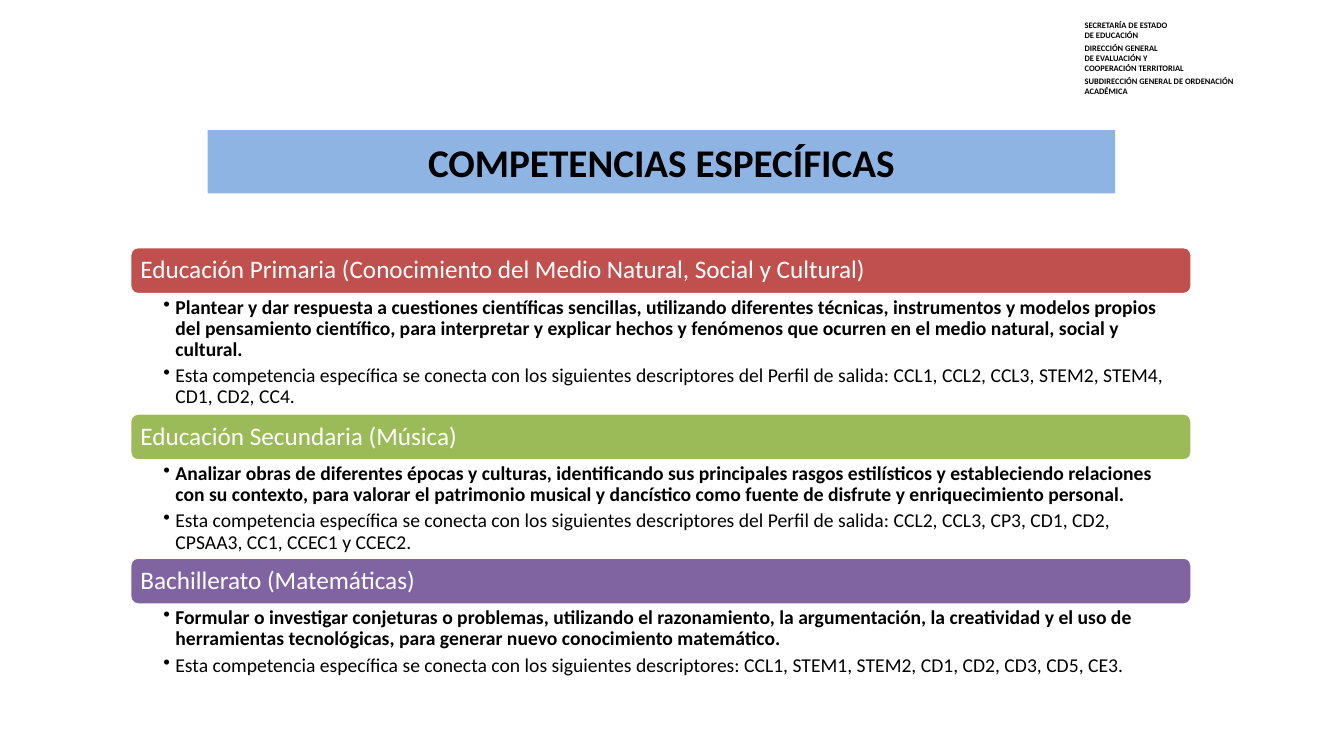
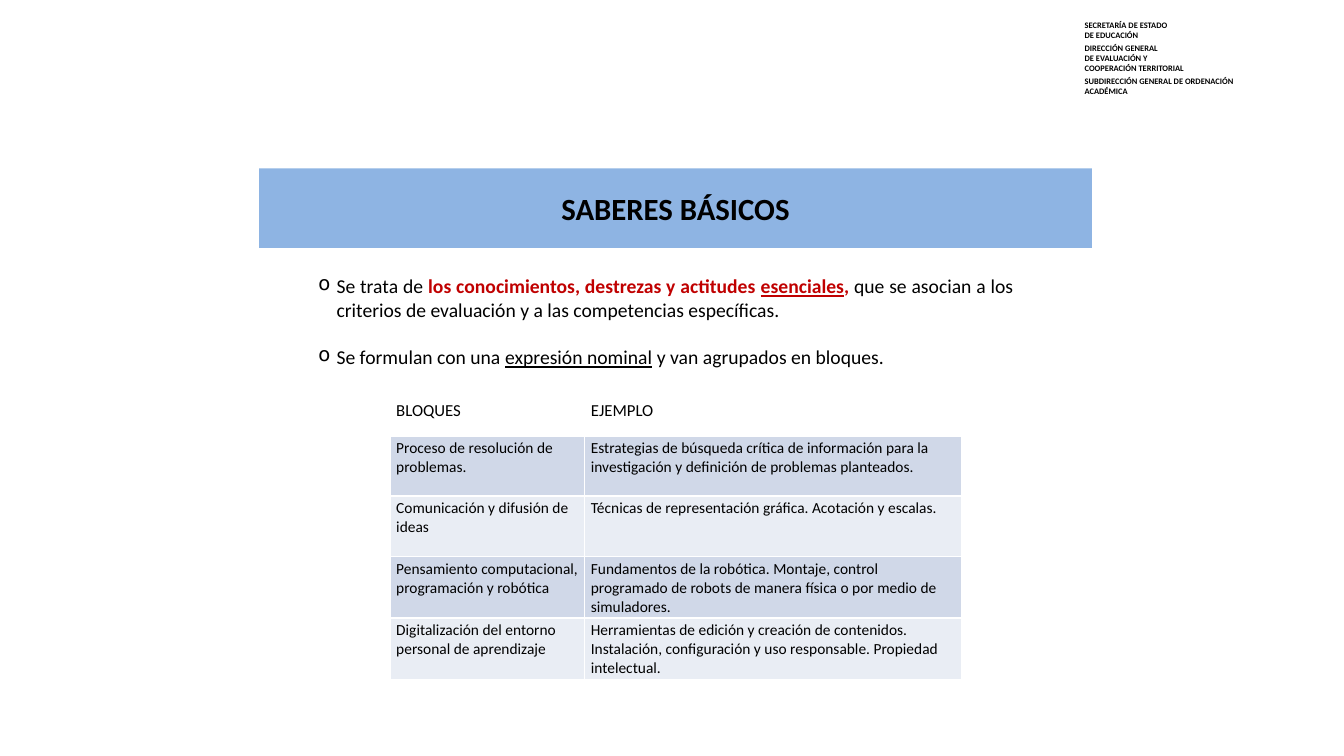
from dataclasses import dataclass

from lxml import etree
from pptx import Presentation
from pptx.dml.color import RGBColor
from pptx.enum.shapes import MSO_SHAPE
from pptx.enum.text import MSO_ANCHOR, PP_ALIGN
from pptx.oxml.ns import qn
from pptx.util import Emu, Pt

PX = 9144  # 100 px to the inch
FONT = "Calibri"
BLANK_LAYOUT = 6

BLACK = RGBColor(0x00, 0x00, 0x00)
WHITE = RGBColor(0xFF, 0xFF, 0xFF)
TITLE_BLUE = RGBColor(0x8E, 0xB4, 0xE3)
RED = RGBColor(0xC0, 0x50, 0x4D)
GREEN = RGBColor(0x9B, 0xBB, 0x59)
PURPLE = RGBColor(0x80, 0x64, 0xA2)
DARK_RED = RGBColor(0xC0, 0x00, 0x00)
ROW_DARK = RGBColor(0xD0, 0xD8, 0xE8)
ROW_LIGHT = RGBColor(0xE9, 0xED, 0xF4)

RECTANGLE = MSO_SHAPE.RECTANGLE
ROUNDED = MSO_SHAPE.ROUNDED_RECTANGLE
TOP, MIDDLE = MSO_ANCHOR.TOP, MSO_ANCHOR.MIDDLE
LEFT, CENTER, JUSTIFY = PP_ALIGN.LEFT, PP_ALIGN.CENTER, PP_ALIGN.JUSTIFY


@dataclass(frozen=True)
class Area:
    left: int
    top: int
    width: int
    height: int

    def emu(self) -> list[Emu]:
        return [px(n) for n in (self.left, self.top, self.width, self.height)]


@dataclass(frozen=True)
class Span:
    text: str
    bold: bool = False
    underline: bool = False
    color: RGBColor = BLACK


@dataclass(frozen=True)
class Stage:
    name: str
    color: RGBColor
    body_height: int
    competence: str
    descriptors: str


DEPARTMENTS = (
    ("SECRETARÍA DE ESTADO", "DE EDUCACIÓN"),
    ("DIRECCIÓN GENERAL", "DE EVALUACIÓN Y", "COOPERACIÓN TERRITORIAL"),
    ("SUBDIRECCIÓN GENERAL DE ORDENACIÓN ACADÉMICA",),
)

STAGES = (
    Stage(
        "Educación Primaria (Conocimiento del Medio Natural, Social y Cultural)", RED, 118,
        "Plantear y dar respuesta a cuestiones científicas sencillas, utilizando diferentes "
        "técnicas, instrumentos y modelos propios del pensamiento científico, para interpretar "
        "y explicar hechos y fenómenos que ocurren en el medio natural, social y cultural.",
        "Esta competencia específica se conecta con los siguientes descriptores del Perfil de "
        "salida: CCL1, CCL2, CCL3, STEM2, STEM4, CD1, CD2, CC4.",
    ),
    Stage(
        "Educación Secundaria (Música)", GREEN, 96,
        "Analizar obras de diferentes épocas y culturas, identificando sus principales rasgos "
        "estilísticos y estableciendo relaciones con su contexto, para valorar el patrimonio "
        "musical y dancístico como fuente de disfrute y enriquecimiento personal.",
        "Esta competencia específica se conecta con los siguientes descriptores del Perfil de "
        "salida: CCL2, CCL3, CP3, CD1, CD2, CPSAA3, CC1, CCEC1 y CCEC2.",
    ),
    Stage(
        "Bachillerato (Matemáticas)", PURPLE, 75,
        "Formular o investigar conjeturas o problemas, utilizando el razonamiento, la "
        "argumentación, la creatividad y el uso de herramientas tecnológicas, para generar "
        "nuevo conocimiento matemático.",
        "Esta competencia específica se conecta con los siguientes descriptores: CCL1, STEM1, "
        "STEM2, CD1, CD2, CD3, CD5, CE3.",
    ),
)

KNOWLEDGE_POINTS = (
    (
        Span("Se trata de "),
        Span("los conocimientos, destrezas y actitudes ", bold=True, color=DARK_RED),
        Span("esenciales", bold=True, underline=True, color=DARK_RED),
        Span(",", bold=True, color=DARK_RED),
        Span(" que se asocian a los criterios de evaluación y a las competencias específicas."),
    ),
    (
        Span("Se formulan con una "),
        Span("expresión nominal", underline=True),
        Span(" y van agrupados en bloques."),
    ),
)

BLOCKS = (
    ("BLOQUES", "EJEMPLO"),
    ("Proceso de resolución de problemas.",
     "Estrategias de búsqueda crítica de información para la investigación y definición de "
     "problemas planteados."),
    ("Comunicación y difusión de ideas",
     "Técnicas de representación gráfica. Acotación y escalas."),
    ("Pensamiento computacional, programación y robótica",
     "Fundamentos de la robótica. Montaje, control programado de robots de manera física o por "
     "medio de simuladores."),
    ("Digitalización del entorno personal de aprendizaje",
     "Herramientas de edición y creación de contenidos. Instalación, configuración y uso "
     "responsable. Propiedad intelectual."),
)


def px(length: int) -> Emu:
    return Emu(length * PX)


def set_margins(target, left: int, top: int, right: int, bottom: int) -> None:
    target.margin_left, target.margin_top = px(left), px(top)
    target.margin_right, target.margin_bottom = px(right), px(bottom)


def add_paragraph(frame, spans, size: float, align=LEFT, before: float = 0):
    """Fill the frame's empty first paragraph, or append one with space before it."""
    para = frame.paragraphs[0]
    if para.runs:
        para = frame.add_paragraph()
        para.space_before = Pt(before)
    para.alignment = align
    for span in spans:
        run = para.add_run()
        run.text = span.text
        run.font.name = FONT
        run.font.size = Pt(size)
        run.font.bold = span.bold
        run.font.underline = span.underline
        run.font.color.rgb = span.color
    return para


def add_bullet(para, symbol: str, margin: int, hanging: int) -> None:
    properties = para._p.get_or_add_pPr()
    properties.set("marL", str(px(margin)))
    properties.set("indent", str(px(-hanging)))
    etree.SubElement(properties, qn("a:buChar")).set("char", symbol)


def add_text_box(slide, area: Area, margins=(10, 5, 10, 5)):
    frame = slide.shapes.add_textbox(*area.emu()).text_frame
    frame.word_wrap = True
    frame.vertical_anchor = TOP
    set_margins(frame, *margins)
    return frame


def add_band(slide, kind, area: Area, fill: RGBColor):
    """Draw a filled band and return it with its text centred vertically."""
    band = slide.shapes.add_shape(kind, *area.emu())
    band.shadow.inherit = False
    band.fill.solid()
    band.fill.fore_color.rgb = fill
    band.line.fill.background()
    band.text_frame.word_wrap = True
    band.text_frame.vertical_anchor = MIDDLE
    return band


def add_page(deck, title: str, title_area: Area, title_size: int):
    page = deck.slides.add_slide(deck.slide_layouts[BLANK_LAYOUT])
    header = add_text_box(page, Area(1066, 15, 204, 86))
    for department in DEPARTMENTS:
        for index, line in enumerate(department):
            add_paragraph(header, [Span(line, bold=True)], 6, before=0 if index else 2)
    band = add_band(page, RECTANGLE, title_area, TITLE_BLUE)
    add_paragraph(band.text_frame, [Span(title, bold=True)], title_size, CENTER)
    return page


def add_stages(page) -> None:
    left, top, width, bar_height = 129, 245, 1053, 47
    for stage in STAGES:
        bar = add_band(page, ROUNDED, Area(left, top, width, bar_height), stage.color)
        bar.line.color.rgb = WHITE
        bar.line.width = Pt(2)
        set_margins(bar.text_frame, 8, 0, 8, 0)
        heading = add_paragraph(bar.text_frame, [Span(stage.name, color=WHITE)], 18)
        heading.line_spacing = 0.9
        top += bar_height

        body = add_text_box(page, Area(left, top, width, stage.body_height), (33, 3, 14, 3))
        for span in (Span(stage.competence, bold=True), Span(stage.descriptors)):
            para = add_paragraph(body, [span], 14, before=3.5)
            para.line_spacing = 0.9
            add_bullet(para, "•", 12, 12)
        top += stage.body_height


def add_cell_border(cell, side: str, width: float) -> None:
    line = etree.SubElement(cell._tc.get_or_add_tcPr(), qn(f"a:{side}"), w=str(Pt(width)))
    fill = etree.SubElement(line, qn("a:solidFill"))
    etree.SubElement(fill, qn("a:srgbClr"), val=str(WHITE))


def add_blocks_table(page) -> None:
    widths = (193, 374)
    heights = (38,) + (60,) * (len(BLOCKS) - 1)
    area = Area(387, 394, sum(widths), sum(heights))
    table = page.shapes.add_table(len(heights), len(widths), *area.emu()).table
    table.first_row = table.horz_banding = False
    for column, width in zip(table.columns, widths):
        column.width = px(width)
    for index, (row, height, texts) in enumerate(zip(table.rows, heights, BLOCKS)):
        row.height = px(height)
        fill = WHITE if index == 0 else (ROW_LIGHT, ROW_DARK)[index % 2]
        borders = {"lnL": 1, "lnR": 1, "lnT": 3 if index == 1 else 1, "lnB": 3 if index == 0 else 1}
        for cell, text in zip(row.cells, texts):
            set_margins(cell, 6, 3, 6, 3)
            for side, width in borders.items():
                add_cell_border(cell, side, width)
            cell.fill.solid()
            cell.fill.fore_color.rgb = fill
            add_paragraph(cell.text_frame, [Span(text)], 11 if index else 12)


def add_knowledge_points(page) -> None:
    frame = add_text_box(page, Area(278, 267, 737, 165))
    for spans in KNOWLEDGE_POINTS:
        para = add_paragraph(frame, spans, 14, JUSTIFY, before=17)
        add_bullet(para, "o", 46, 18)


def main() -> None:
    deck = Presentation()
    deck.slide_width, deck.slide_height = px(1333), px(750)

    competences = add_page(deck, "COMPETENCIAS ESPECÍFICAS", Area(206, 129, 900, 63), 28)
    add_stages(competences)

    knowledge = add_page(deck, "SABERES BÁSICOS", Area(257, 167, 826, 79), 22)
    add_blocks_table(knowledge)
    add_knowledge_points(knowledge)

    deck.save("out.pptx")


if __name__ == "__main__":
    main()
